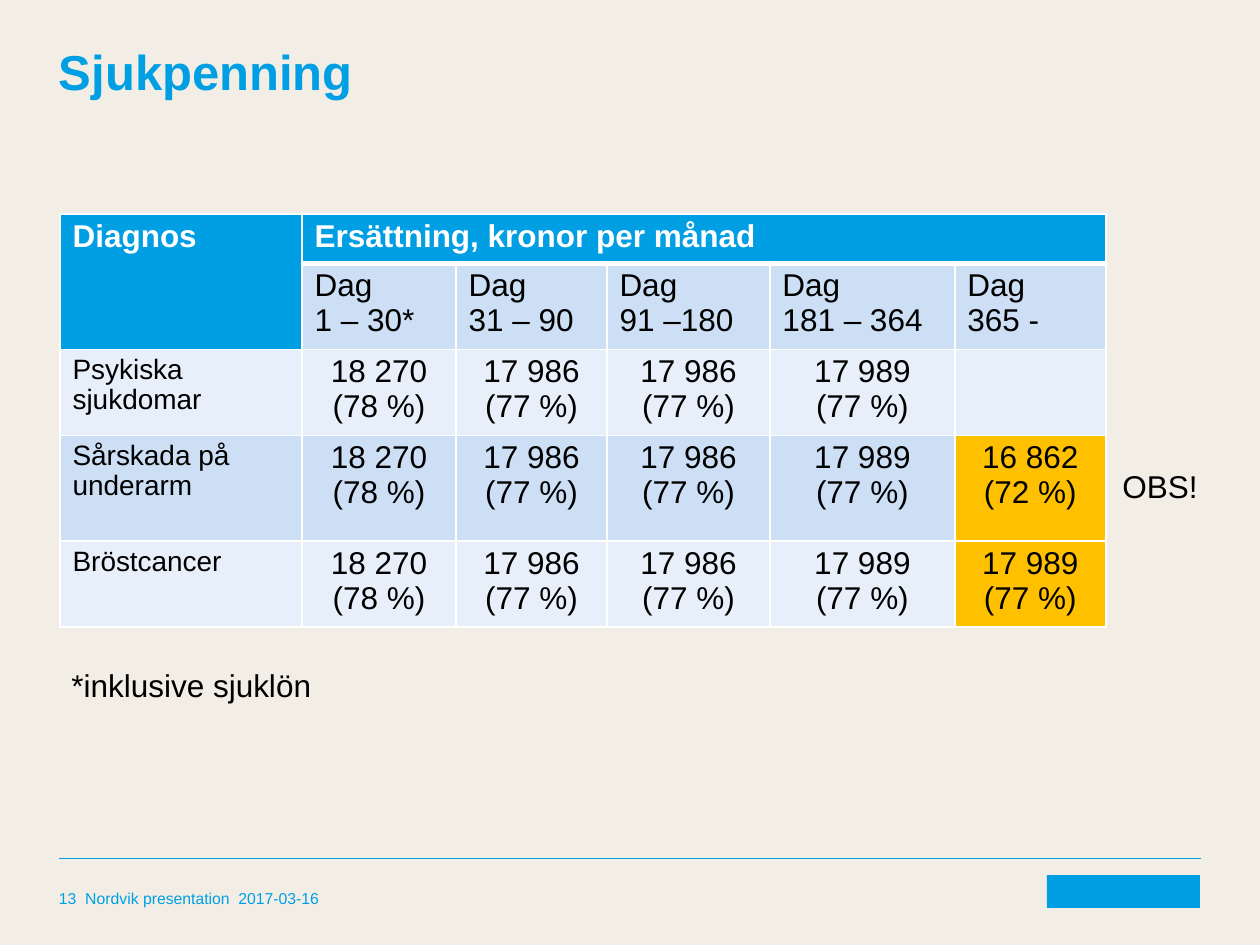
from lxml.etree import SubElement
from pptx import Presentation
from pptx.dml.color import RGBColor
from pptx.enum.shapes import MSO_CONNECTOR, MSO_SHAPE
from pptx.enum.text import MSO_ANCHOR, PP_ALIGN
from pptx.oxml.ns import qn
from pptx.util import Emu, Pt

BLUE, WHITE, BLACK, AMBER = "009FE4", "FFFFFF", "000000", "FFC000"
DARK_BAND, LIGHT_BAND = "CCDFF5", "E7F0FA"
COLS = [242, 154, 151, 163, 185, 151]
ROWS = [49, 83, 83, 106, 83]
DAYS = ["1 – 30*", "31 – 90", "91 –180", "181 – 364", "365 -"]
COMMON = ["18 270\n(78 %)", "17 986\n(77 %)", "17 986\n(77 %)", "17 989\n(77 %)"]
DIAGNOSES = [
    ("Psykiska sjukdomar", "", LIGHT_BAND),
    ("Sårskada på underarm", "16 862\n(72 %)", DARK_BAND),
    ("Bröstcancer", "17 989\n(77 %)", LIGHT_BAND),
]


def px(n):
    """Turn pixels into EMU."""
    return Emu(round(n * 914400 / 126))


def color(value):
    """Turn a hex string into a colour."""
    return RGBColor.from_string(value)


def set_text(tf, text, size, hex_color, bold=False, align=PP_ALIGN.LEFT):
    """Fill a text frame and format its runs."""
    tf.text = text
    for p in tf.paragraphs:
        p.alignment = align
        p.line_spacing = 0.97
        for r in p.runs:
            r.font.name = "Arial"
            r.font.size = Pt(size)
            r.font.bold = bold
            r.font.color.rgb = color(hex_color)


def add_text(s, box, text, size, hex_color, bold=False, inset=True,
             wrap=True, anchor=MSO_ANCHOR.TOP):
    """Add a text box."""
    tf = s.shapes.add_textbox(*map(px, box)).text_frame
    tf.word_wrap = wrap
    tf.vertical_anchor = anchor
    if not inset:
        tf.margin_left = tf.margin_top = tf.margin_right = tf.margin_bottom = 0
    set_text(tf, text, size, hex_color, bold)


def add_rule(s, x1, y, x2):
    """Add the thin footer line."""
    sp = s.shapes.add_connector(MSO_CONNECTOR.STRAIGHT, px(x1), px(y), px(x2), px(y))
    sp.line.color.rgb = color(BLUE)
    sp.line.width = Pt(0.5)
    SubElement(sp._element.spPr, qn("a:effectLst"))


def add_mark(s, box):
    """Add the plain block in the footer corner."""
    sp = s.shapes.add_shape(MSO_SHAPE.RECTANGLE, *map(px, box))
    sp.shadow.inherit = False
    sp.fill.solid()
    sp.fill.fore_color.rgb = color(BLUE)
    sp.line.fill.background()


def style_cell(cell, fill, bottom=1):
    """Give a cell white borders and a solid fill."""
    tc_pr = cell._tc.get_or_add_tcPr()
    for side, width in (("L", 1), ("R", 1), ("T", 1), ("B", bottom)):
        ln = SubElement(tc_pr, qn(f"a:ln{side}"), w=str(Pt(width)))
        SubElement(SubElement(ln, qn("a:solidFill")), qn("a:srgbClr"), val=WHITE)
    cell.fill.solid()
    cell.fill.fore_color.rgb = color(fill)


def add_benefit_table(s, left, top):
    """Add the table of benefit by diagnosis and day interval."""
    table = s.shapes.add_table(len(ROWS), len(COLS), px(left), px(top),
                               px(sum(COLS)), px(sum(ROWS))).table
    table.first_row = table.horz_banding = False
    for col, width in zip(table.columns, COLS):
        col.width = px(width)
    for row, height in zip(table.rows, ROWS):
        row.height = px(height)

    for c in range(len(COLS)):
        style_cell(table.cell(0, c), BLUE, 3 if c else 1)
    style_cell(table.cell(1, 0), BLUE, 3)
    table.cell(0, 0).merge(table.cell(1, 0))
    table.cell(0, 1).merge(table.cell(0, len(COLS) - 1))
    for c, text in enumerate(["Diagnos", "Ersättning, kronor per månad"]):
        set_text(table.cell(0, c).text_frame, text, 18, WHITE, True)

    for c, days in enumerate(DAYS, 1):
        cell = table.cell(1, c)
        style_cell(cell, DARK_BAND)
        set_text(cell.text_frame, f"Dag\n{days}", 18, BLACK)

    for i, (diagnosis, last, band) in enumerate(DIAGNOSES, 2):
        cell = table.cell(i, 0)
        style_cell(cell, band)
        set_text(cell.text_frame, diagnosis, 16, BLACK)
        for c, amount in enumerate(COMMON + [last], 1):
            cell = table.cell(i, c)
            style_cell(cell, AMBER if c == len(DAYS) and last else band)
            set_text(cell.text_frame, amount, 18, BLACK, align=PP_ALIGN.CENTER)


def main():
    """Build the slide."""
    prs = Presentation()
    prs.slide_width, prs.slide_height = px(1260), px(945)
    s = prs.slides.add_slide(prs.slide_layouts[6])
    s.background.fill.solid()
    s.background.fill.fore_color.rgb = color("F2EEE6")
    add_rule(s, 59, 858, 1201)
    add_mark(s, (1047, 875, 153, 33))
    add_text(s, (59, 45, 1142, 208), "Sjukpenning", 28, BLUE, bold=True, inset=False)
    add_text(s, (59, 875, 297, 33), "13  Nordvik presentation  2017-03-16", 9, BLUE,
             inset=False, anchor=MSO_ANCHOR.BOTTOM)
    add_benefit_table(s, 60, 214)
    add_text(s, (59, 662, 367, 50), "*inklusive sjuklön", 18, BLACK)
    add_text(s, (1110, 463, 102, 50), "OBS!", 18, BLACK, wrap=False)
    prs.save("out.pptx")


if __name__ == "__main__":
    main()
